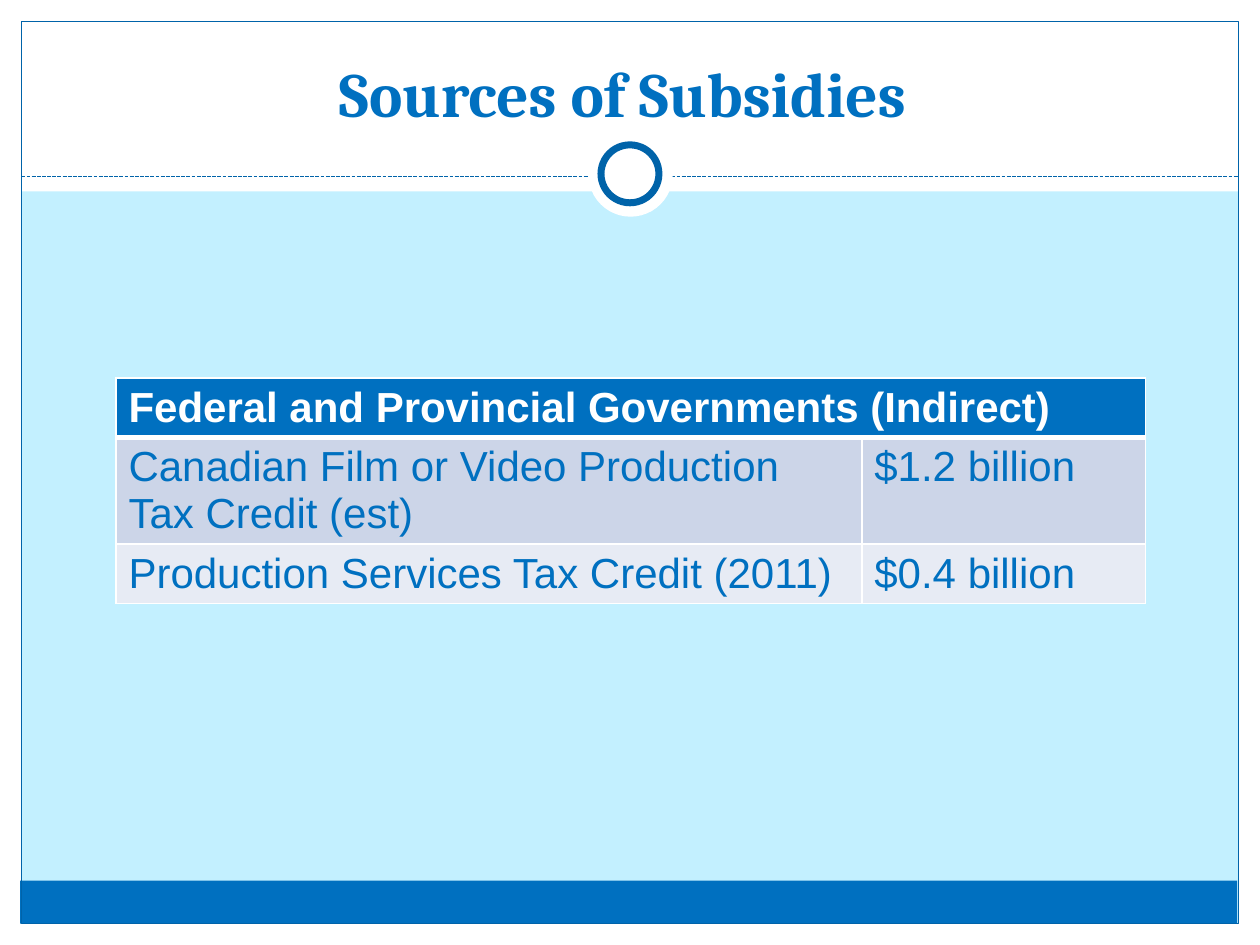
from lxml.etree import SubElement
from pptx import Presentation
from pptx.dml.color import RGBColor
from pptx.enum.dml import MSO_LINE
from pptx.enum.shapes import MSO_CONNECTOR, MSO_SHAPE
from pptx.enum.text import MSO_ANCHOR, PP_ALIGN
from pptx.oxml import parse_xml
from pptx.oxml.ns import nsdecls, qn
from pptx.util import Inches, Pt

WHITE, BLUE, EDGE, SKY = "FFFFFF", "0070C0", "0063A9", "C3F0FF"
BAND_FILLS = ["CCD5E8", "E7EBF4"]
TITLE = "Sources of Subsidies "
HEADER = "Federal and Provincial Governments (Indirect)"
CREDITS = [
    ("Canadian Film or Video Production Tax Credit (est)", "$1.2 billion"),
    ("Production Services Tax Credit (2011)", "$0.4 billion"),
]
COL_WIDTHS = [5.92, 2.25]
ROW_HEIGHT = 0.41
RECT, OVAL = MSO_SHAPE.RECTANGLE, MSO_SHAPE.OVAL
FRAME_SHAPES = [
    (RECT, (0, 7.33, 10, 0.17), WHITE, None),
    (RECT, (0, 0, 10, 1.52), WHITE, None),
    (RECT, (0, 0, 0.17, 7.5), WHITE, None),
    (RECT, (9.83, 0, 0.17, 7.5), WHITE, None),
    (RECT, (0.16, 6.99, 9.66, 0.34), BLUE, None),
    (RECT, (0.17, 0.17, 9.66, 7.16), None, 0.75),
]
RING_SHAPES = [
    (OVAL, (4.67, 1.05, 0.67, 0.67), WHITE, None),
    (OVAL, (4.77, 1.15, 0.46, 0.46), WHITE, 4),
]


def paint(fill, color):
    fill.solid()
    fill.fore_color.rgb = RGBColor.from_string(color)


def style(p, font, size, color, bold):
    for r in p.runs:
        r.font.name, r.font.size, r.font.bold = font, Pt(size), bold
        r.font.color.rgb = RGBColor.from_string(color)


def add_shapes(slide, shapes):
    for kind, box, fill, line_width in shapes:
        sp = slide.shapes.add_shape(kind, *map(Inches, box))
        sp.shadow.inherit = False
        if fill:
            paint(sp.fill, fill)
        else:
            sp.fill.background()
        if line_width:
            paint(sp.line.fill, EDGE)
            sp.line.width = Pt(line_width)
        else:
            sp.line.fill.background()


def add_divider(slide):
    line = slide.shapes.add_connector(
        MSO_CONNECTOR.STRAIGHT, *map(Inches, (0.17, 1.4, 9.83, 1.4)))
    paint(line.line.fill, EDGE)
    line.line.width = Pt(0.75)
    line.line.dash_style = MSO_LINE.SQUARE_DOT
    SubElement(line.element.spPr, qn("a:effectLst"))


def set_title(slide):
    title = slide.shapes.title
    title.left, title.top, title.width, title.height = map(
        Inches, (0.33, 0.25, 9.33, 0.83))
    tf = title.text_frame
    tf.text = TITLE
    tf.vertical_anchor = MSO_ANCHOR.BOTTOM
    p = tf.paragraphs[0]
    p.alignment = PP_ALIGN.CENTER
    style(p, "Cambria", 36, BLUE, True)
    slide.shapes.element.append(title.element)


def set_borders(cell, widths):
    tc_pr = cell._tc.get_or_add_tcPr()
    for i, (side, width) in enumerate(zip("LRTB", widths)):
        tc_pr.insert(i, parse_xml(
            f'<a:ln{side} {nsdecls("a")} w="{Pt(width)}"><a:solidFill>'
            f'<a:srgbClr val="{WHITE}"/></a:solidFill></a:ln{side}>'))


def add_credit_table(slide):
    rows = [(HEADER, "")] + CREDITS
    table = slide.shapes.add_table(
        len(rows), len(COL_WIDTHS), Inches(0.92), Inches(3),
        Inches(sum(COL_WIDTHS)), Inches(ROW_HEIGHT * len(rows))).table
    for column, width in zip(table.columns, COL_WIDTHS):
        column.width = Inches(width)
    for i, values in enumerate(rows):
        header = i == 0
        for j, value in enumerate(values):
            cell = table.cell(i, j)
            cell.text = value
            style(cell.text_frame.paragraphs[0], "Arial", 24,
                  WHITE if header else BLUE, header)
            paint(cell.fill, BLUE if header else BAND_FILLS[(i - 1) % 2])
            set_borders(cell, (1, 1, 3 if i == 1 else 1, 3 if header else 1))
    table.cell(0, 0).merge(table.cell(0, 1))


def main():
    prs = Presentation()
    prs.slide_width, prs.slide_height = Inches(10), Inches(7.5)
    slide = prs.slides.add_slide(prs.slide_layouts[5])
    paint(slide.background.fill, SKY)
    add_shapes(slide, FRAME_SHAPES)
    add_divider(slide)
    add_shapes(slide, RING_SHAPES)
    set_title(slide)
    add_credit_table(slide)
    prs.save("out.pptx")


if __name__ == "__main__":
    main()
